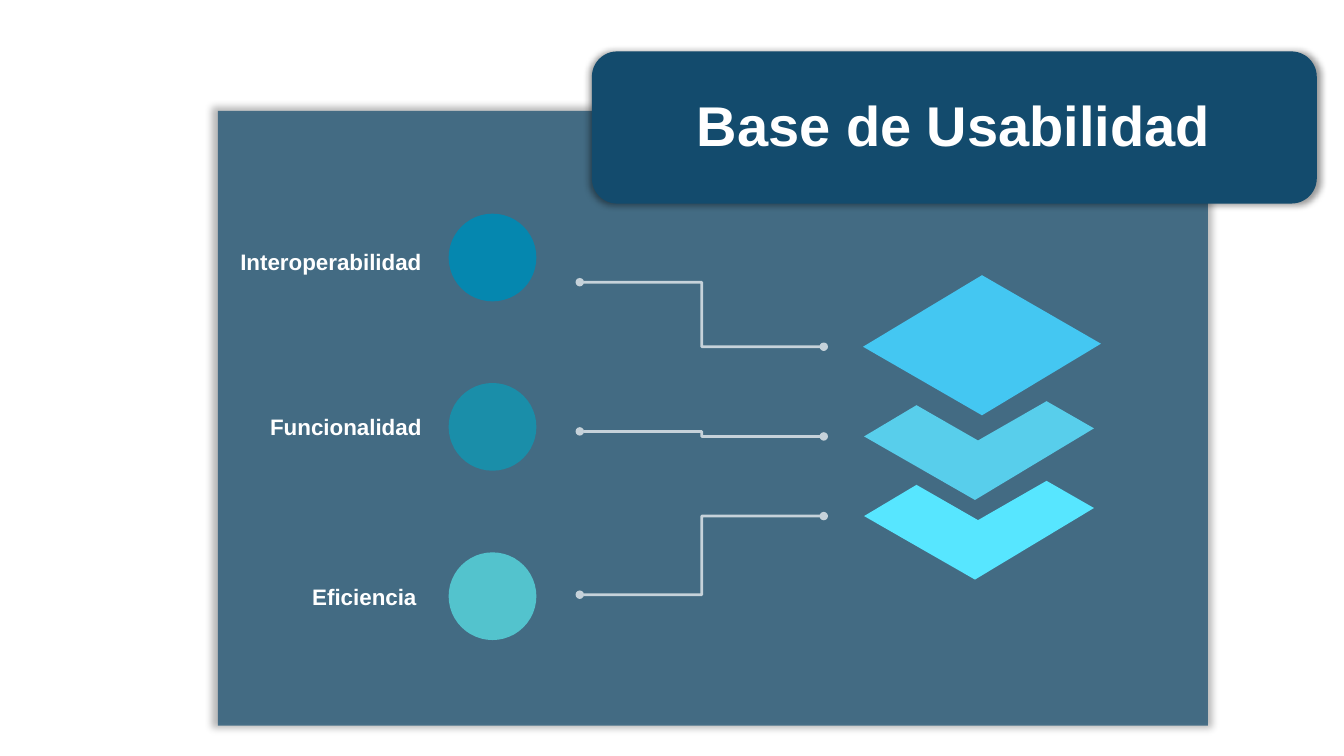
from dataclasses import dataclass

from lxml.etree import SubElement
from pptx import Presentation
from pptx.dml.color import RGBColor
from pptx.enum.shapes import MSO_CONNECTOR as Connector, MSO_SHAPE as Shape
from pptx.enum.text import MSO_ANCHOR as Anchor, PP_ALIGN as Align
from pptx.oxml.ns import qn
from pptx.util import Inches, Pt


@dataclass(frozen=True)
class Theme:
    font: str = "Arial"
    navy: str = "134B6D"
    white: str = "FFFFFF"
    shadow: str = "000000"
    title_size: int = 40
    label_size: int = 16
    line_width: int = 2
    opacity: int = 70
    shadow_opacity: int = 40


@dataclass(frozen=True)
class Quality:
    name: str
    circle_color: str
    label_right: float
    label_top: float
    line_start: float
    line_end: float


@dataclass(frozen=True)
class Layer:
    color: str
    top: float
    outline: tuple[tuple[float, float], ...]


THEME = Theme()
QUALITIES = (
    Quality("Interoperabilidad", "0587AF", 4.28, 2.41, 2.8, 3.44),
    Quality("Funcionalidad", "1A8EA9", 4.28, 4.05, 4.28, 4.33),
    Quality("Eficiencia", "53C3CD", 4.23, 5.73, 5.9, 5.12),
)
CIRCLE_LEFT, CIRCLE_TOP, CIRCLE_SIZE, CIRCLE_STEP = 4.45, 2.12, 0.87, 1.68
LABEL_WIDTH, LABEL_HEIGHT = 2.07, 0.37
LINE_LEFT, LINE_RIGHT = 5.75, 8.17

LAYER_LEFT = 8.56
DIAMOND = ((0, 0.71), (1.18, 0), (2.36, 0.68), (1.18, 1.39))
CHEVRON = ((0.01, 0.35), (0.53, 0.04), (1.14, 0.39),
           (1.82, 0), (2.29, 0.27), (1.11, 0.98))
LAYERS = (
    Layer("58CEEB", 3.98, CHEVRON),
    Layer("44C7F2", 2.73, DIAMOND),
    Layer("57E6FF", 4.77, CHEVRON),
)


def rgb(color: str) -> RGBColor:
    return RGBColor.from_string(color)


def paint(shape, color: str) -> None:
    """Give a shape a flat fill, no outline and no shadow."""
    shape.shadow.inherit = False
    shape.fill.solid()
    shape.fill.fore_color.rgb = rgb(color)
    shape.line.fill.background()


def set_opacity(color_parent, percent: int) -> None:
    """Set the alpha of the colour inside a fill or shadow element."""
    color = color_parent.find(qn("a:srgbClr"))
    SubElement(color, qn("a:alpha"), val=str(percent * 1000))


def add_glow_shadow(shape) -> None:
    """Add a soft centred shadow that shows on every side."""
    effects = shape._element.spPr.find(qn("a:effectLst"))
    shadow = SubElement(effects, qn("a:outerShdw"), blurRad=str(Pt(5)),
                        sx="101000", sy="101000", algn="ctr", rotWithShape="0")
    SubElement(shadow, qn("a:srgbClr"), val=THEME.shadow)
    set_opacity(shadow, THEME.shadow_opacity)


def add_block(page, kind: Shape, left: float, top: float,
              width: float, height: float, color: str):
    block = page.shapes.add_shape(
        kind, Inches(left), Inches(top), Inches(width), Inches(height))
    paint(block, color)
    return block


def write(box, text: str, size: int, align: Align) -> None:
    box.text_frame.word_wrap = True
    box.text_frame.vertical_anchor = Anchor.MIDDLE
    para = box.text_frame.paragraphs[0]
    para.text = text
    para.alignment = align
    font = para.font
    font.name, font.size, font.bold = THEME.font, Pt(size), True
    font.color.rgb = rgb(THEME.white)


def add_title(page, text: str) -> None:
    title = page.shapes.title
    title.left, title.top = Inches(6.13), Inches(0.85)
    title.width, title.height = Inches(6.65), Inches(0.77)
    write(title, text, THEME.title_size, Align.CENTER)
    title.text_frame.paragraphs[0].line_spacing = 1.0
    page.shapes._spTree.append(title._element)  # in front of the banner


def add_layer(page, layer: Layer) -> None:
    points = [(Inches(LAYER_LEFT + x), Inches(layer.top + y))
              for x, y in layer.outline]
    builder = page.shapes.build_freeform(*points[0])
    builder.add_line_segments(points[1:], close=True)
    paint(builder.convert_to_shape(), layer.color)


def add_link(page, start: float, end: float) -> None:
    """Draw an elbow line with a dot at each end."""
    link = page.shapes.add_connector(
        Connector.ELBOW, Inches(LINE_LEFT), Inches(start),
        Inches(LINE_RIGHT), Inches(end))
    link.line.width = Pt(THEME.line_width)
    link.line.color.rgb = rgb(THEME.white)
    line = link.line._get_or_add_ln()
    set_opacity(line.find(qn("a:solidFill")), THEME.opacity)
    for tag in ("a:headEnd", "a:tailEnd"):
        SubElement(line, qn(tag), type="oval")
    SubElement(link._element.spPr, qn("a:effectLst"))


def add_quality(page, quality: Quality, row: int) -> None:
    add_block(page, Shape.OVAL, CIRCLE_LEFT, CIRCLE_TOP + row * CIRCLE_STEP,
              CIRCLE_SIZE, CIRCLE_SIZE, quality.circle_color)
    label = page.shapes.add_textbox(
        Inches(quality.label_right - LABEL_WIDTH), Inches(quality.label_top),
        Inches(LABEL_WIDTH), Inches(LABEL_HEIGHT))
    write(label, quality.name, THEME.label_size, Align.RIGHT)
    add_link(page, quality.line_start, quality.line_end)


def main() -> None:
    deck = Presentation()
    deck.slide_width, deck.slide_height = Inches(13.33), Inches(7.5)
    page = deck.slides.add_slide(deck.slide_layouts.get_by_name("Title Only"))

    panel = add_block(page, Shape.RECTANGLE, 2.16, 1.1, 9.82, 6.1, THEME.navy)
    set_opacity(panel._element.spPr.find(qn("a:solidFill")), THEME.opacity)
    banner = add_block(page, Shape.ROUNDED_RECTANGLE,
                       5.87, 0.51, 7.19, 1.51, THEME.navy)
    for backdrop in (panel, banner):
        add_glow_shadow(backdrop)
    add_title(page, "Base de Usabilidad")

    for layer in LAYERS:
        add_layer(page, layer)
    for row, quality in enumerate(QUALITIES):
        add_quality(page, quality, row)
    deck.save("out.pptx")


if __name__ == "__main__":
    main()
